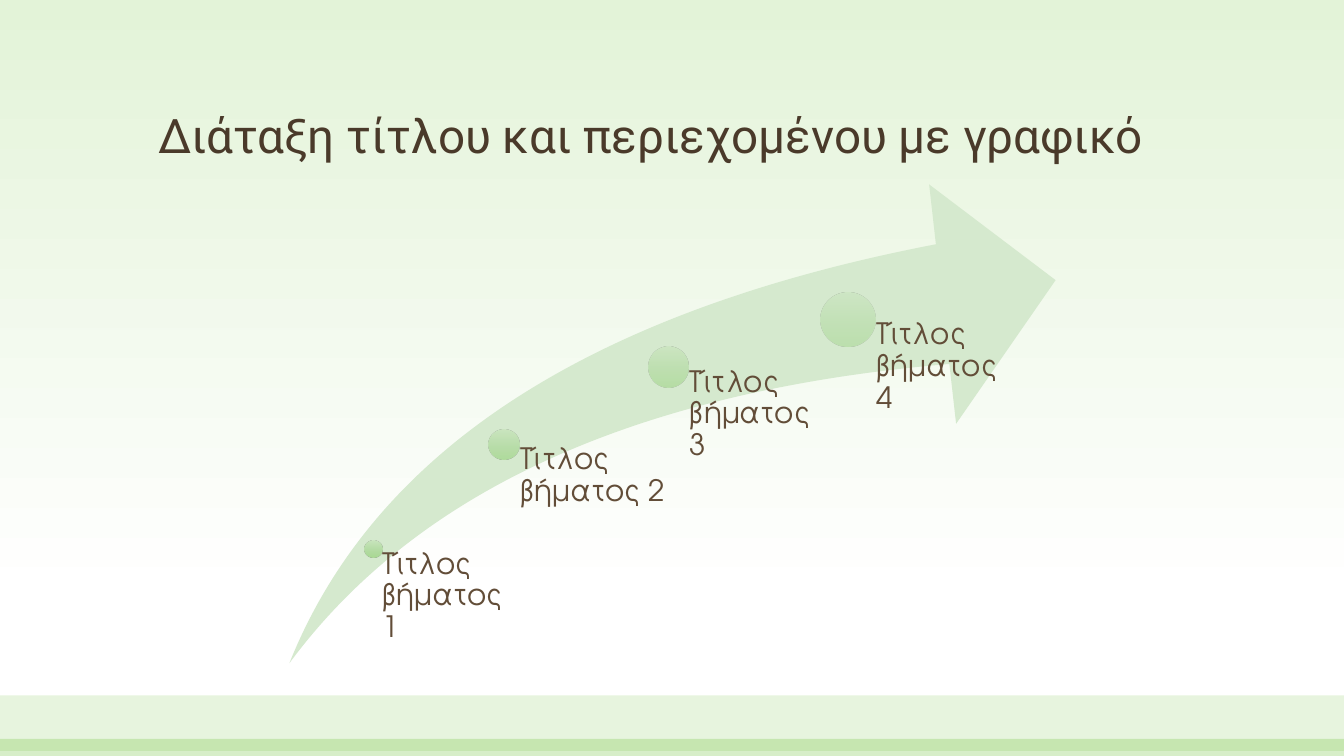
from lxml.etree import SubElement
from pptx import Presentation
from pptx.dml.color import RGBColor
from pptx.enum.shapes import MSO_SHAPE as Preset
from pptx.enum.text import MSO_ANCHOR as Anchor
from pptx.oxml.ns import qn
from pptx.util import Inches, Pt

COLORS = {
    "sky": "E3F3D8", "white": "FFFFFF", "footer": "72C23C", "arrow": "D5E9CE",
    "dot_top": "C8E5BC", "dot_middle": "B3DBA2", "dot_bottom": "A4D78D",
    "title": "4A3A2A", "label": "624D38",
}

presentation = Presentation()
presentation.slide_width = Inches(13.33)
presentation.slide_height = Inches(7.5)
slide = presentation.slides.add_slide(presentation.slide_layouts[6])
shapes = slide.shapes
across = presentation.slide_width / 100
down = presentation.slide_height / 100


def paint_gradient(fill, element, stops, opacity=100):
    fill.gradient()
    fill.gradient_angle = 270
    stop_list = element.xpath(".//a:gsLst")[0]
    for stop in list(stop_list):
        stop_list.remove(stop)
    for position, name in stops:
        stop = SubElement(stop_list, qn("a:gs"), pos=str(position * 1000))
        color = SubElement(stop, qn("a:srgbClr"), val=COLORS[name])
        SubElement(color, qn("a:alpha"), val=str(opacity * 1000))


def add_text(text, left, top, width, height, font_format, frame_format):
    text_frame = shapes.add_textbox(*map(round, (left, top, width, height))).text_frame
    for name, value in {"word_wrap": True, **frame_format}.items():
        setattr(text_frame, name, value)
    paragraph = text_frame.paragraphs[0]
    paragraph.text = text
    paragraph.line_spacing = 0.9
    for name, value in font_format.items():
        setattr(paragraph.font, name, value)
    return paragraph.font


paint_gradient(slide.background.fill, slide.element, [(0, "sky"), (79, "white")])

for top, height, opacity in [(92, 7.33, 17), (97.73, 2.27, 28)]:
    band = shapes.add_shape(Preset.RECTANGLE, 0, round(top * down),
                            presentation.slide_width, round(height * down))
    band.shadow.inherit = False
    band.line.fill.background()
    band.fill.solid()
    band.fill.fore_color.rgb = RGBColor.from_string(COLORS["footer"])
    color = band.element.spPr.find(".//" + qn("a:srgbClr"))
    SubElement(color, qn("a:alpha"), val=str(opacity * 1000))

title_font = add_text(
    "Διάταξη τίτλου και περιεχομένου με γραφικό",
    11.03 * across, 6.4 * down, 78.02 * across, 15.87 * down,
    {"name": "Roboto", "size": Pt(34)}, {"vertical_anchor": Anchor.BOTTOM})
title_font.color.rgb = RGBColor.from_string(COLORS["title"])

arrow_top, arrow_height = 24.4 * down, 63.33 * down
arrow = shapes.add_shape(Preset.SWOOSH_ARROW, round(21.53 * across), round(arrow_top),
                         round(57.01 * across), round(arrow_height))
arrow.shadow.inherit = False
arrow.line.fill.background()
arrow.fill.solid()
arrow.fill.fore_color.rgb = RGBColor.from_string(COLORS["arrow"])
for index in range(2):
    arrow.adjustments[index] = 0.25

steps = [
    (27.79, 72.6, 2.27, 9.75, 90),
    (37.51, 58.8, 4, 12, 77),
    (49.74, 48.53, 5.33, 12, 63),
    (63.09, 42.27, 7.2, 12, 50),
]
dot_stops = [(0, "dot_top"), (50, "dot_middle"), (100, "dot_bottom")]
for number, (column, row, size, label_width, opacity) in enumerate(steps, 1):
    center_x, center_y, diameter = column * across, row * down, size * down
    dot = shapes.add_shape(Preset.OVAL, round(center_x - diameter / 2),
                           round(center_y - diameter / 2), round(diameter), round(diameter))
    dot.shadow.inherit = False
    dot.line.fill.background()
    paint_gradient(dot.fill, dot.element, dot_stops, opacity)
    label_font = add_text(
        f"Τίτλος βήματος {number}", center_x, center_y,
        label_width * across, arrow_top + arrow_height - center_y,
        {"name": "TeX Gyre Adventor", "size": Pt(21)},
        {"margin_left": round(diameter * 0.53), "margin_top": 0,
         "margin_right": 0, "margin_bottom": 0})
    label_font.color.rgb = RGBColor.from_string(COLORS["label"])

presentation.save("out.pptx")
